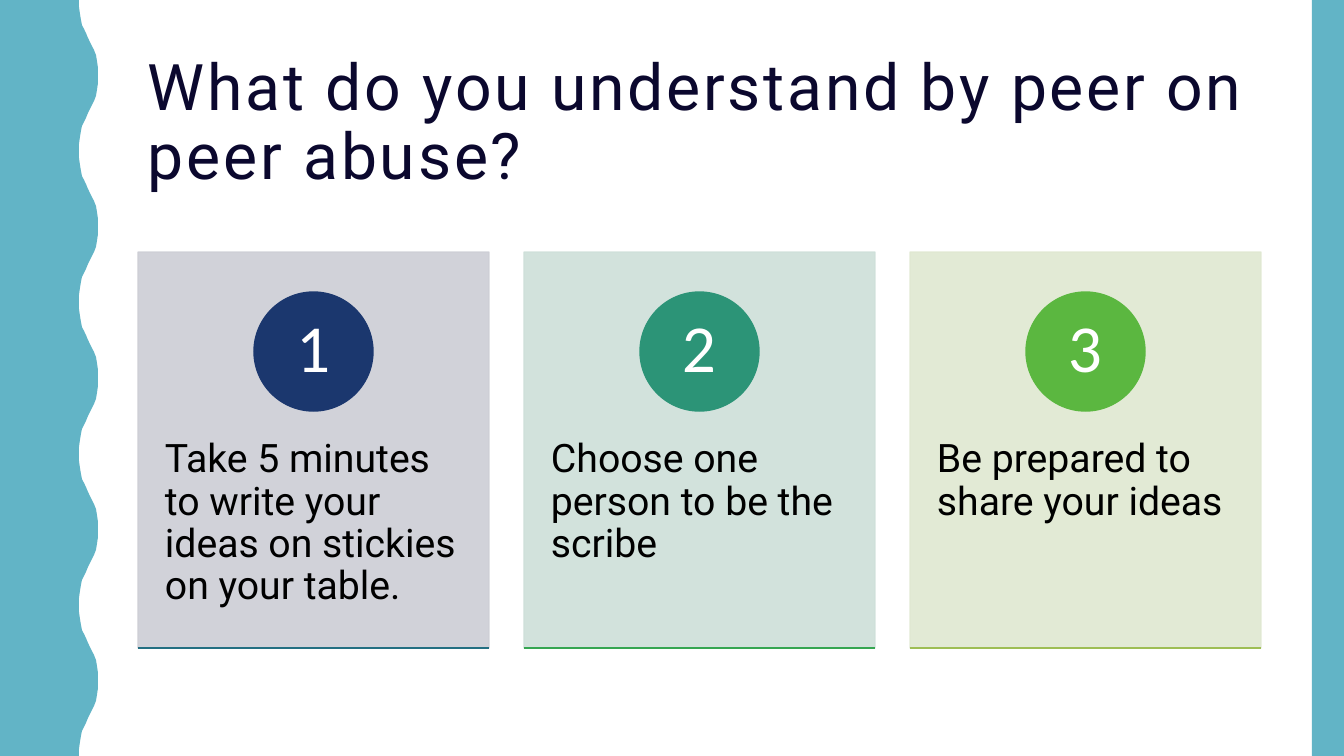
from dataclasses import dataclass

from lxml import etree
from pptx import Presentation
from pptx import util as u
from pptx.dml.color import RGBColor
from pptx.enum import shapes, text
from pptx.oxml.ns import qn

EMU_PER_PX = 914400 / 100.8
SLIDE_W, SLIDE_H = 1344, 756
TEAL, NAVY, WHITE, BLACK = "62B4C6", "0B082E", "FFFFFF", "000000"

# One half of a wave, crest to trough, as (x, y)
WAVE_COUNT = 5
WAVE_HEIGHT = SLIDE_H / WAVE_COUNT
HALF_WAVE = [(79, 0), (79, 7), (80, 14), (81, 20), (82, 25), (84, 29), (86, 33),
             (88, 38), (90, 42), (92, 46), (94, 50), (96, 55), (97, 61), (98, 68)]
WAVE_TIP = (98, 76)

CARD_LEFT, CARD_TOP, CARD_W, CARD_H, CARD_PITCH = 138, 252, 351, 396, 386
CIRCLE_TOP, CIRCLE_SIZE = 292, 119
NUMBER_TOP, NUMBER_SIZE = 309, 84
BODY_TOP, BODY_H = 403, 238


@dataclass
class Step:
    words: str
    panel: str
    circle: str
    rule: str


@dataclass
class Style:
    size: float
    font: str
    color: str
    inset_x: int
    inset_y: int
    anchor: text.MSO_ANCHOR = text.MSO_ANCHOR.MIDDLE
    align: text.PP_ALIGN = text.PP_ALIGN.LEFT
    spacing: int = 0  # hundredths of a point


STEPS = [
    Step("Take 5 minutes to write your ideas on stickies on your table.",
         "CDCED5", "1B376E", "236F82"),
    Step("Choose one person to be the scribe", "CEDFD9", "2C9477", "36A652"),
    Step("Be prepared to share your ideas", "DFE8D1", "5BB740", "9EBE55"),
]
TITLE = Style(45.9, "Roboto", NAVY, 10, 5, spacing=200)
NUMBER = Style(48, "Calibri", WHITE, 9, 1, align=text.PP_ALIGN.CENTER)
BODY = Style(28, "Roboto", BLACK, 27, 36, anchor=text.MSO_ANCHOR.TOP)


def px(length: float) -> int:
    return u.Emu(round(length * EMU_PER_PX))


def rgb(color: str) -> RGBColor:
    return RGBColor.from_string(color)


def paint(shape, color: str, outlined: bool = False) -> None:
    shape.shadow.inherit = False
    shape.fill.solid()
    shape.fill.fore_color.rgb = rgb(color)
    if outlined:
        shape.line.color.rgb = rgb(color)
        shape.line.width = u.Pt(1)
    else:
        shape.line.fill.background()


def add_block(slide, kind, left: int, top: int, width: int, height: int,
              color: str, outlined: bool = False):
    shape = slide.shapes.add_shape(kind, px(left), px(top), px(width), px(height))
    paint(shape, color, outlined)
    return shape


def set_alpha(shape, percent: int) -> None:
    for color in shape._element.spPr.iter(qn("a:srgbClr")):
        etree.SubElement(color, qn("a:alpha"), val=str(percent * 1000))


def add_text(slide, words: str, left: int, top: int, width: int, height: int,
             style: Style) -> None:
    box = slide.shapes.add_textbox(px(left), px(top), px(width), px(height))
    frame = box.text_frame
    frame.word_wrap = True
    frame.vertical_anchor = style.anchor
    frame.margin_left = frame.margin_right = px(style.inset_x)
    frame.margin_top = frame.margin_bottom = px(style.inset_y)
    paragraph = frame.paragraphs[0]
    paragraph.text = words
    paragraph.alignment = style.align
    paragraph.line_spacing = 0.9
    paragraph.font.size = u.Pt(style.size)
    paragraph.font.name = style.font
    paragraph.font.color.rgb = rgb(style.color)
    if style.spacing:
        paragraph.font._element.set("spc", str(style.spacing))


def add_rule(slide, left: int, top: int, width: int, color: str) -> None:
    rule = slide.shapes.add_connector(
        shapes.MSO_CONNECTOR.STRAIGHT, px(left), px(top), px(left + width), px(top))
    rule.line.color.rgb = rgb(color)
    rule.line.width = u.Pt(1)
    etree.SubElement(rule._element.spPr, qn("a:effectLst"))


def add_wavy_edge(slide) -> None:
    points = []
    for wave in range(WAVE_COUNT):
        start = wave * WAVE_HEIGHT
        points += [(x, start + y) for x, y in HALF_WAVE + [WAVE_TIP]]
        points += [(x, start + WAVE_HEIGHT - y) for x, y in reversed(HALF_WAVE)]
    builder = slide.shapes.build_freeform(0, 0, scale=EMU_PER_PX)
    builder.add_line_segments(points + [(0, SLIDE_H)], close=True)
    paint(builder.convert_to_shape(), TEAL)


def add_card(slide, number: int, step: Step) -> None:
    left = CARD_LEFT + (number - 1) * CARD_PITCH
    center = left + CARD_W // 2
    panel = add_block(slide, shapes.MSO_SHAPE.RECTANGLE, left, CARD_TOP,
                      CARD_W, CARD_H, step.panel, outlined=True)
    set_alpha(panel, 90)
    add_text(slide, step.words, left, BODY_TOP, CARD_W, BODY_H, BODY)
    add_block(slide, shapes.MSO_SHAPE.OVAL, center - CIRCLE_SIZE // 2, CIRCLE_TOP,
              CIRCLE_SIZE, CIRCLE_SIZE, step.circle, outlined=True)
    add_text(slide, str(number), center - NUMBER_SIZE // 2, NUMBER_TOP,
             NUMBER_SIZE, NUMBER_SIZE, NUMBER)
    add_rule(slide, left, CARD_TOP + CARD_H, CARD_W, step.rule)


def main() -> None:
    presentation = Presentation()
    presentation.slide_width, presentation.slide_height = px(SLIDE_W), px(SLIDE_H)
    slide = presentation.slides.add_slide(presentation.slide_layouts[6])

    # Title
    add_text(slide, "What do you understand by peer on peer abuse?",
             138, 42, 1122, 164, TITLE)

    # Side bands
    add_wavy_edge(slide)
    add_block(slide, shapes.MSO_SHAPE.RECTANGLE, 1312, 0, 32, SLIDE_H, TEAL)

    # Numbered cards
    for number, step in enumerate(STEPS, start=1):
        add_card(slide, number, step)

    presentation.save("out.pptx")


if __name__ == "__main__":
    main()
